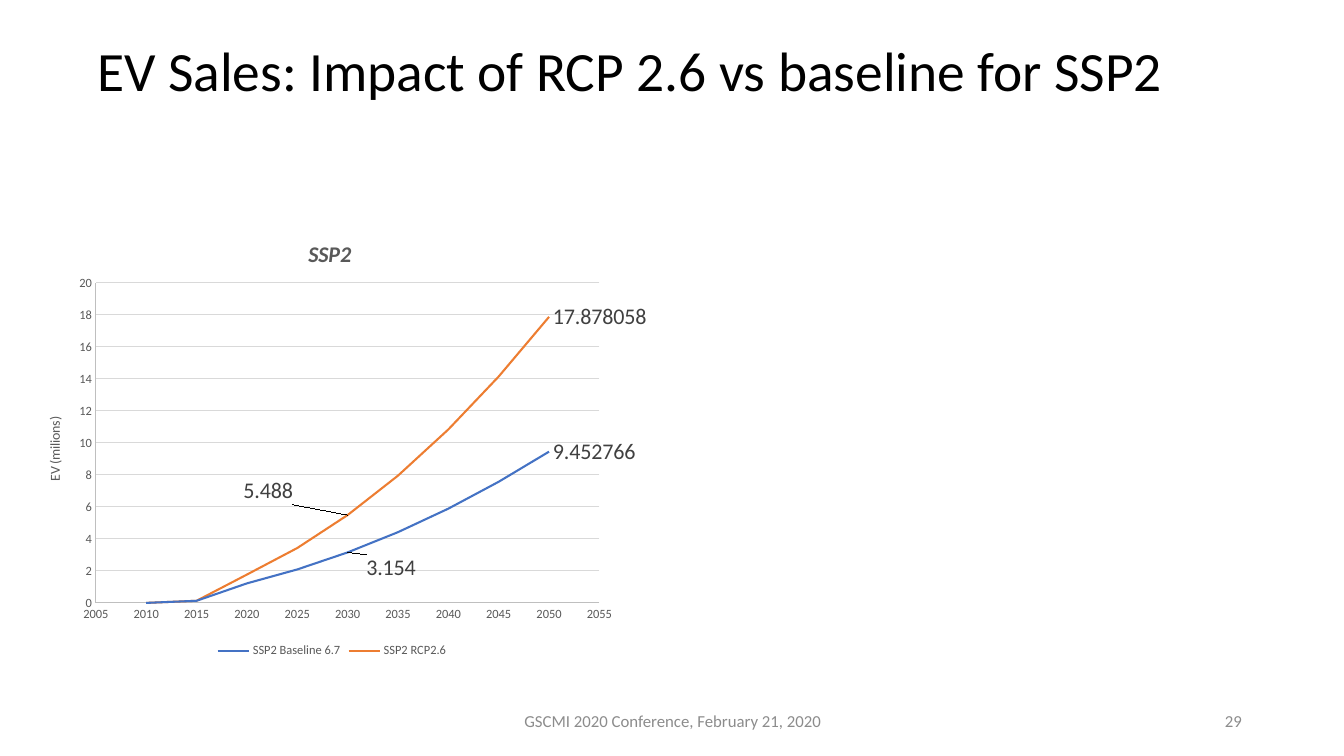
"""Build the slide on electric vehicle sales under SSP2."""
from dataclasses import dataclass

from lxml.etree import SubElement
from pptx import Presentation
from pptx.chart.data import XyChartData
from pptx.dml.color import RGBColor
from pptx.enum.chart import XL_CHART_TYPE as Kind
from pptx.enum.chart import XL_LABEL_POSITION as Spot
from pptx.enum.chart import XL_LEGEND_POSITION as Side
from pptx.enum.chart import XL_TICK_MARK as Tick
from pptx.enum.text import MSO_ANCHOR as Anchor
from pptx.enum.text import MSO_AUTO_SIZE as Fit
from pptx.enum.text import PP_ALIGN as Align
from pptx.oxml.ns import qn
from pptx.util import Pt

SCALE = 914400 / 100.8
FONT = "Calibri"
HUES = {"black": "000000", "text": "595959", "label": "404040", "foot": "8C8C8C",
        "axis": "BFBFBF", "grid": "D9D9D9", "blue": "4472C4", "orange": "ED7D31"}
YEARS = range(2010, 2051, 5)
MID, LAST = 4, 8


@dataclass
class Box:
    """A rectangle in px."""
    left: int
    top: int
    width: int
    height: int

    def emu(self) -> list[int]:
        """Return the four lengths in EMU."""
        return [px(n) for n in (self.left, self.top, self.width, self.height)]


@dataclass
class Curve:
    """A sales path and the px shift of its middle label."""
    name: str
    hue: str
    sales: tuple[float, ...]
    shift: tuple[int, int]


@dataclass
class Note:
    """A line of text at the foot of the slide."""
    text: str
    box: Box
    align: Align


CHART = Box(27, 213, 620, 449)
PLOT = Box(97, 283, 512, 320)
CURVES = (
    Curve("SSP2 Baseline 6.7", "blue",
          (0, 0.13, 1.22, 2.09, 3.154, 4.42, 5.89, 7.57, 9.452766), (15, 16)),
    Curve("SSP2 RCP2.6", "orange",
          (0, 0.13, 1.77, 3.43, 5.488, 7.95, 10.84, 14.15, 17.878058), (-110, -24)),
)
NOTES = (
    Note("29", Box(950, 701, 302, 40), Align.RIGHT),
    Note("GSCMI 2020 Conference, February 21, 2020", Box(446, 701, 454, 40), Align.CENTER),
)


def px(count: int) -> int:
    """Turn px into EMU."""
    return round(count * SCALE)


def style(font, size: float, hue: str, bold: bool = False, slant: bool = False) -> None:
    """Set the look of a font."""
    font.name, font.size, font.bold, font.italic = FONT, Pt(size), bold, slant
    font.color.rgb = RGBColor.from_string(HUES[hue])


def ink(line, hue: str, width: float = 0.75) -> None:
    """Set the colour and width of a line."""
    line.color.rgb = RGBColor.from_string(HUES[hue])
    line.width = Pt(width)


def place(node, index: int, **parts) -> None:
    """Give a chart part a manual layout."""
    for old in node.findall(qn("c:layout")):
        node.remove(old)
    layout = SubElement(node, qn("c:layout"))
    node.insert(index, layout)
    manual = SubElement(layout, qn("c:manualLayout"))
    for tag, val in parts.items():
        SubElement(manual, qn(f"c:{tag}")).set("val", str(val))


def ratio(left: int, top: int) -> dict[str, float]:
    """Express a px offset as shares of the chart."""
    return {"x": round(left / CHART.width, 4), "y": round(top / CHART.height, 4)}


def head(holder, text: str, size: float, bold: bool) -> None:
    """Write a title of the chart or an axis."""
    holder.text_frame.text = text
    style(holder.text_frame.paragraphs[0].runs[0].font, size, "text", bold, bold)


def axes(chart) -> None:
    """Format both axes."""
    years, sales = chart.category_axis, chart.value_axis
    for axis, low, high, step in ((years, 2005, 2055, 5), (sales, 0, 20, 2)):
        axis.minimum_scale, axis.maximum_scale, axis.major_unit = low, high, step
        axis.major_tick_mark = axis.minor_tick_mark = Tick.NONE
        axis.tick_labels.number_format = "0"
        axis.tick_labels.number_format_is_linked = False
        style(axis.tick_labels.font, 9, "text")
        ink(axis.format.line, "axis")
    years.has_major_gridlines = False
    sales.has_major_gridlines = True
    ink(sales.major_gridlines.format.line, "grid")
    head(sales.axis_title, "EV (milions)", 10, False)


def trace(series, curve: Curve) -> None:
    """Format one curve and label its middle and last points."""
    series.smooth = True
    ink(series.format.line, curve.hue, 1.5)
    for index in (MID, LAST):
        label = series.points[index].data_label
        style(label.font, 16, "label")
        label.position = Spot.RIGHT
    labels = series._element.find(qn("c:dLbls"))
    labels.find(qn("c:showVal")).set("val", "0")
    place(labels.find(qn("c:dLbl")), 1, **ratio(*curve.shift))


def graph(slide) -> None:
    """Add the sales chart."""
    data = XyChartData()
    for curve in CURVES:
        row = data.add_series(curve.name)
        for year, sale in zip(YEARS, curve.sales):
            row.add_data_point(year, sale)
    chart = slide.shapes.add_chart(Kind.XY_SCATTER_SMOOTH_NO_MARKERS, *CHART.emu(), data).chart
    style(chart.font, 10, "black")
    head(chart.chart_title, "SSP2", 16, True)
    place(chart.chart_title._element, 1, xMode="edge", yMode="edge", **ratio(282, 22))
    chart.has_legend = True
    chart.legend.position = Side.BOTTOM
    chart.legend.include_in_layout = False
    style(chart.legend.font, 9, "text")
    axes(chart)
    for series, curve in zip(chart.plots[0].series, CURVES):
        trace(series, curve)
    size = ratio(PLOT.width, PLOT.height)
    place(chart._chartSpace.chart.plotArea, 0, layoutTarget="inner", xMode="edge", yMode="edge",
          **ratio(PLOT.left - CHART.left, PLOT.top - CHART.top), w=size["x"], h=size["y"])


def write(shape, text: str, size: float, hue: str, align: Align) -> None:
    """Fill a shape with one line of text."""
    frame = shape.text_frame
    frame.text = text
    frame.word_wrap, frame.auto_size = True, Fit.NONE
    frame.vertical_anchor = Anchor.MIDDLE
    line = frame.paragraphs[0]
    line.alignment = align
    style(line.runs[0].font, size, hue)


def main() -> None:
    """Build and save the slide."""
    deck = Presentation()
    deck.slide_width, deck.slide_height = px(1344), px(756)
    slide = deck.slides.add_slide(deck.slide_layouts[5])
    title = slide.shapes.title
    title.left, title.top, title.width, title.height = Box(87, 40, 1164, 67).emu()
    write(title, "EV Sales: Impact of RCP 2.6 vs baseline for SSP2", 39.6, "black", Align.LEFT)
    title.text_frame.paragraphs[0].line_spacing = 0.9
    graph(slide)
    for note in NOTES:
        write(slide.shapes.add_textbox(*note.box.emu()), note.text, 12, "foot", note.align)
    deck.save("out.pptx")


if __name__ == "__main__":
    main()
